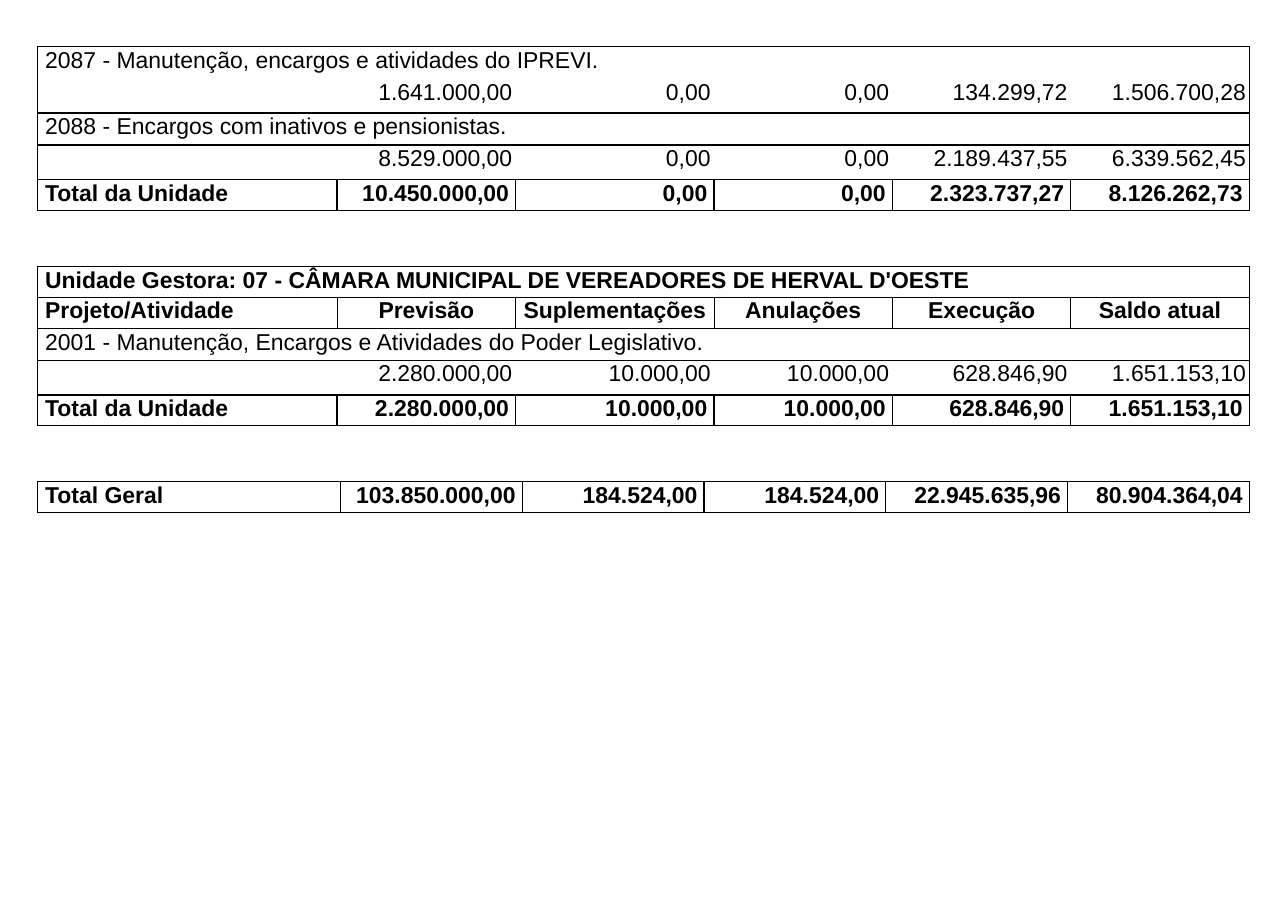
from dataclasses import dataclass
from lxml.etree import SubElement
from pptx import Presentation
from pptx.dml.color import RGBColor as Rgb
from pptx.enum.text import MSO_ANCHOR as Anchor, PP_ALIGN as Align
from pptx.oxml.ns import qn
from pptx.util import Inches, Pt


@dataclass(frozen=True)
class Theme:
    font: str = "Arial"
    size: float = 15
    ink: str = "000000"
    thin: float = 0.5
    line: float = 1
    plain: str = "{2D5ABB26-0587-4C30-8999-92F81FD0307C}"


@dataclass(frozen=True)
class Kind:
    """Format of one type of row; sides are named L, R, T and B."""
    height: float
    bold: bool = False
    align: Align = Align.RIGHT
    right: float = 0.06
    top: float = 0.01
    before: float = 0.6
    span: bool = False
    sides: str = "LRTB"
    grid: bool = True
    width: float = Theme.line


THEME = Theme()
UNIT = Kind(0.28, bold=True, span=True, before=0.5, width=THEME.thin)
HEAD = Kind(0.28, bold=True, align=Align.CENTER, right=0, top=0, before=0.3, width=THEME.thin)
ITEM = Kind(0.29, span=True)
OPEN = Kind(0.29, span=True, sides="LRT")
VALUES = Kind(0.31, right=0.03, before=0.8, sides="TB", grid=False)
TAIL = Kind(0.31, right=0.03, before=0.8, sides="B", grid=False)
TOTAL = Kind(0.28, bold=True)

LEFT = 0.34
COLS = [2.72, 1.62, 1.8, 1.62, 1.62, 1.62]
WIDE = [2.75] + [1.65] * 5

IPREVI = [
    (OPEN, ["2087 - Manutenção, encargos e atividades do IPREVI."]),
    (TAIL, ["", "1.641.000,00", "0,00", "0,00", "134.299,72", "1.506.700,28"]),
    (ITEM, ["2088 - Encargos com inativos e pensionistas."]),
    (VALUES, ["", "8.529.000,00", "0,00", "0,00", "2.189.437,55", "6.339.562,45"]),
    (TOTAL, ["Total da Unidade", "10.450.000,00", "0,00", "0,00", "2.323.737,27", "8.126.262,73"]),
]
SUMS = ["2.280.000,00", "10.000,00", "10.000,00", "628.846,90", "1.651.153,10"]
CHAMBER = [
    (UNIT, ["Unidade Gestora: 07 - CÂMARA MUNICIPAL DE VEREADORES DE HERVAL D'OESTE"]),
    (HEAD, ["Projeto/Atividade", "Previsão", "Suplementações", "Anulações", "Execução", "Saldo atual"]),
    (ITEM, ["2001 - Manutenção, Encargos e Atividades do Poder Legislativo."]),
    (VALUES, ["", *SUMS]),
    (TOTAL, ["Total da Unidade", *SUMS]),
]
GRAND = [
    (TOTAL, ["Total Geral", "103.850.000,00", "184.524,00", "184.524,00", "22.945.635,96", "80.904.364,04"]),
]


def assign(target, values):
    for name, value in values.items():
        setattr(target, name, value)


def border(cell, side, width):
    line = SubElement(cell._tc.get_or_add_tcPr(), qn(f"a:ln{side}"), w=str(Pt(width)))
    fill = SubElement(line, qn("a:solidFill"))
    SubElement(fill, qn("a:srgbClr"), val=THEME.ink)


def frame(cell, kind, first, last):
    """Rule the cell's sides; rows without a grid keep only thin outer sides."""
    for side in "LRTB":
        outer = not kind.grid and (side == "L" and first or side == "R" and last)
        if outer:
            border(cell, side, THEME.thin)
        elif side in kind.sides:
            border(cell, side, kind.width)


def write(cell, text, kind, first):
    assign(cell, {
        "margin_left": Inches(0.07 if first else 0),
        "margin_right": Inches(0 if first else kind.right),
        "margin_top": Inches(kind.top),
        "margin_bottom": 0,
        "vertical_anchor": Anchor.TOP,
    })
    para = cell.text_frame.paragraphs[0]
    assign(para, {
        "alignment": Align.LEFT if first else kind.align,
        "space_before": Pt(kind.before),
    })
    if text:
        run = para.add_run()
        run.text = text
        assign(run.font, {"name": THEME.font, "size": Pt(THEME.size), "bold": kind.bold})
        run.font.color.rgb = Rgb.from_string(THEME.ink)


def budget(slide, left, top, cols, rows):
    """Place one budget table with its corner at left, top."""
    height = sum(kind.height for kind, _ in rows)
    box = map(Inches, (left, top, sum(cols), height))
    table = slide.shapes.add_table(len(rows), len(cols), *box).table
    assign(table, {"first_row": False, "horz_banding": False})
    table._tbl.tblPr.find(qn("a:tableStyleId")).text = THEME.plain
    for col, width in zip(table.columns, cols):
        col.width = Inches(width)
    end = len(cols) - 1
    for r, (kind, texts) in enumerate(rows):
        table.rows[r].height = Inches(kind.height)
        if kind.span:
            table.cell(r, 0).merge(table.cell(r, end))
        for c, text in enumerate(texts):
            cell = table.cell(r, c)
            write(cell, text, kind, c == 0)
            frame(cell, kind, c == 0, c == end)
        for cell in table.rows[r].cells:
            cell.fill.background()


def main():
    deck = Presentation()
    assign(deck, {"slide_width": Inches(11.69), "slide_height": Inches(8.27)})
    slide = deck.slides.add_slide(deck.slide_layouts[6])
    budget(slide, LEFT, 0.42, COLS, IPREVI)
    budget(slide, LEFT, 2.42, COLS, CHAMBER)
    budget(slide, LEFT, 4.37, WIDE, GRAND)
    deck.save("out.pptx")


if __name__ == "__main__":
    main()
